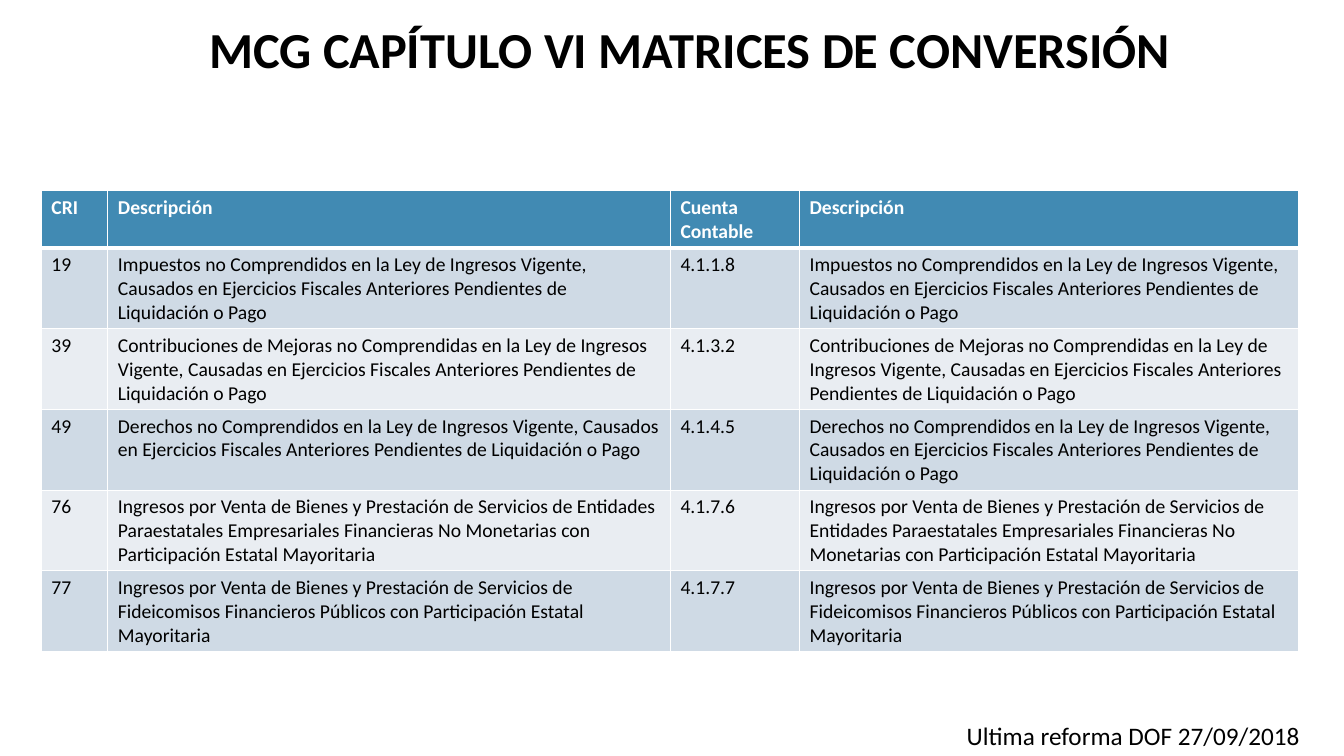
from lxml.etree import SubElement
from pptx import Presentation
from pptx.dml.color import RGBColor
from pptx.enum.text import PP_ALIGN as Align
from pptx.oxml.ns import qn
from pptx.util import Inches, Pt

FONT = "Calibri"
HEADERS = ["CRI", "Descripción", "Cuenta Contable", "Descripción"]
ACCOUNTS = [
    ("19", "4.1.1.8", "Impuestos no Comprendidos en la Ley de Ingresos Vigente, Causados en "
     "Ejercicios Fiscales Anteriores Pendientes de Liquidación o Pago"),
    ("39", "4.1.3.2", "Contribuciones de Mejoras no Comprendidas en la Ley de Ingresos Vigente, "
     "Causadas en Ejercicios Fiscales Anteriores Pendientes de Liquidación o Pago"),
    ("49", "4.1.4.5", "Derechos no Comprendidos en la Ley de Ingresos Vigente, Causados en "
     "Ejercicios Fiscales Anteriores Pendientes de Liquidación o Pago"),
    ("76", "4.1.7.6", "Ingresos por Venta de Bienes y Prestación de Servicios de Entidades "
     "Paraestatales Empresariales Financieras No Monetarias con Participación Estatal Mayoritaria"),
    ("77", "4.1.7.7", "Ingresos por Venta de Bienes y Prestación de Servicios de Fideicomisos "
     "Financieros Públicos con Participación Estatal Mayoritaria"),
]
COLUMN_WIDTHS = [0.66, 5.58, 1.28, 4.95]
HEADER_HEIGHT = 0.57


def color(value):
    """Return the colour for a hex string."""
    return RGBColor.from_string(value)


def style(para, size, ink="000000", bold=False):
    """Format every run of a paragraph."""
    for span in para.runs:
        span.font.name = FONT
        span.font.size = Pt(size)
        span.font.bold = bold
        span.font.color.rgb = color(ink)


def add_text(page, box, text, size, bold=False, align=Align.LEFT):
    """Place one wrapped paragraph in a box and return it."""
    frame = page.shapes.add_textbox(*map(Inches, box)).text_frame
    frame.word_wrap = True
    frame.text = text
    para = frame.paragraphs[0]
    para.alignment = align
    style(para, size, bold=bold)
    return para


def add_borders(cell, bottom, top):
    """Draw white borders around a cell, with the given top and bottom widths."""
    properties = cell._tc.get_or_add_tcPr()
    for side, width in (("L", 1), ("R", 1), ("T", top), ("B", bottom)):
        line = SubElement(properties, qn(f"a:ln{side}"), w=str(Pt(width)))
        fill = SubElement(line, qn("a:solidFill"))
        SubElement(fill, qn("a:srgbClr"), val="FFFFFF")


def add_matrix(page, box):
    """Place the conversion table, with a header and banded rows, in a box."""
    rows = [HEADERS] + [(code, name, account, name) for code, account, name in ACCOUNTS]
    table = page.shapes.add_table(len(rows), len(HEADERS), *map(Inches, box)).table
    for column, width in zip(table.columns, COLUMN_WIDTHS):
        column.width = Inches(width)
    body_height = (box[3] - HEADER_HEIGHT) / len(ACCOUNTS)
    for i, values in enumerate(rows):
        header = i == 0
        table.rows[i].height = Inches(HEADER_HEIGHT if header else body_height)
        shade = "418AB3" if header else "CFDAE5" if i % 2 else "E9EDF2"
        for cell, value in zip(table.rows[i].cells, values):
            add_borders(cell, bottom=3 if header else 1, top=3 if i == 1 else 1)
            cell.fill.solid()
            cell.fill.fore_color.rgb = color(shade)
            cell.text = value
            style(cell.text_frame.paragraphs[0], 14, "FFFFFF" if header else "000000", header)


def add_conversion_slide(deck):
    """Build the slide with its title, table and reform date."""
    page = deck.slides.add_slide(deck.slide_layouts[6])
    title = add_text(page, (1.2, 0.2, 11.4, 1.19), "MCG CAPÍTULO VI MATRICES DE CONVERSIÓN ",
                     36, bold=True, align=Align.CENTER)
    title.line_spacing = 0.9
    add_matrix(page, (0.41, 1.89, sum(COLUMN_WIDTHS), 4.57))
    add_text(page, (9.49, 7.1, 3.84, 0.4), "Ultima reforma DOF 27/09/2018", 18)


def main():
    """Create and save the deck."""
    deck = Presentation()
    deck.slide_width, deck.slide_height = Inches(13.33), Inches(7.5)
    add_conversion_slide(deck)
    deck.save("out.pptx")


if __name__ == "__main__":
    main()
